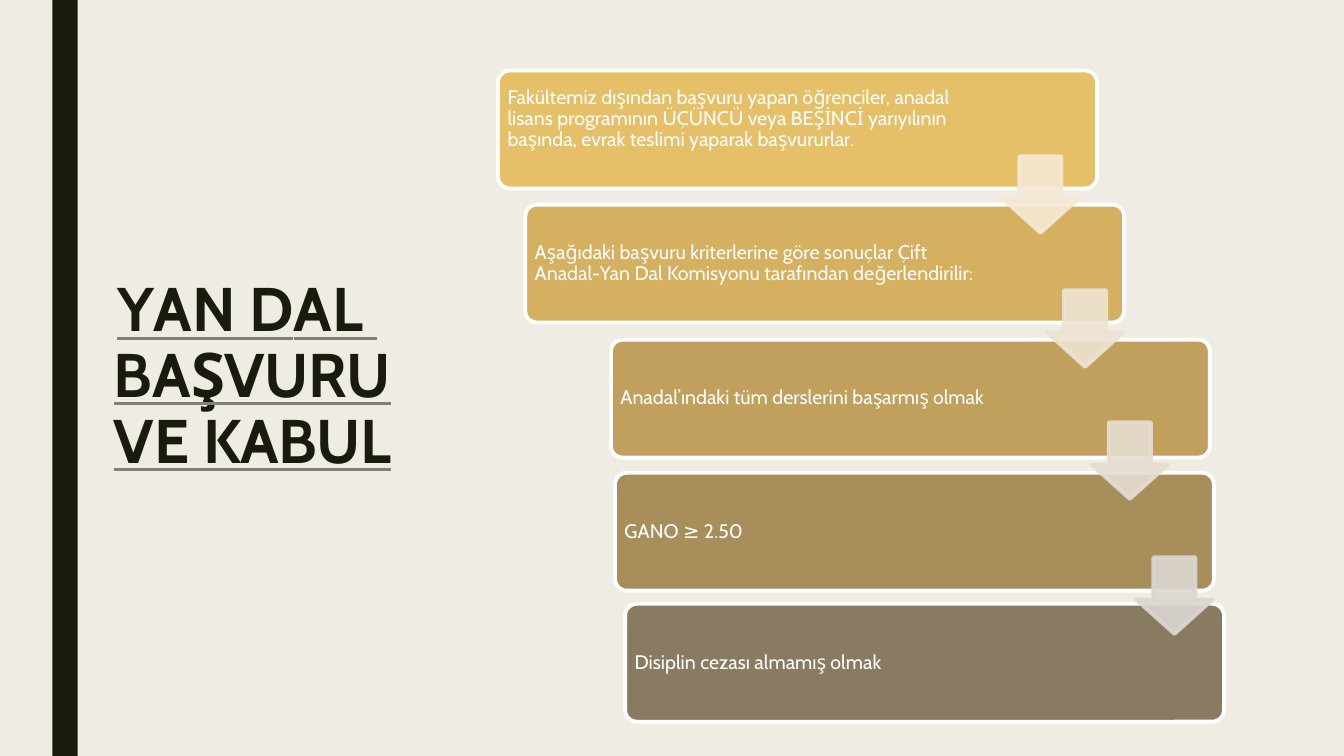
"""Build the slide on applying for a minor, with five stepped cards."""
import pptx
import pptx.util
import pptx.dml.color
import pptx.enum.shapes
import pptx.enum.text
import lxml.etree
from dataclasses import dataclass
from pptx.util import Inches

TITLE = [("Y", -4.3), ("A", -0.6), ("N ", -0.5), ("D", -1.6), ("A", -0.6),
         ("L", 0), (" ", 8), ("\v", 0), ("B", -1), ("A", -0.5), ("Ş", -1),
         ("VUR", -0.5), ("U", 0), (" ", -1.3), ("V", -0.5), ("E", 0),
         (" ", -1.4), ("KABU", -0.5), ("L", 0)]

# left, top, fill, right inset, bottom inset, text
CARDS = [
    (4.94, 0.7, "E6C069", 1.39, 0.27,
     "Fakültemiz dışından başvuru yapan öğrenciler, anadal lisans programının "
     "ÜÇÜNCÜ veya BEŞİNCİ yarıyılının başında, evrak teslimi yaparak başvururlar."),
    (5.21, 2.03, "D5B061", 1.27, 0.06,
     "Aşağıdaki başvuru kriterlerine göre sonuçlar Çift Anadal-Yan Dal "
     "Komisyonu tarafından değerlendirilir:"),
    (6.06, 3.37, "C0A05C", 1.27, 0.06,
     "Anadal’ındaki tüm derslerini başarmış olmak"),
    (6.1, 4.69, "A88E5B", 1.27, 0.06, "GANO ≥ 2.50"),
    (6.2, 5.99, "897B61", 1.27, 0.06, "Disiplin cezası almamış olmak"),
]
ARROWS = [(1.55, "F5E8D4"), (2.88, "EEE3D2"), (4.19, "E5DDD1"), (5.53, "DAD7D2")]
CARD_W, CARD_H = 5.94, 1.17
ARROW_X, ARROW_STEP, ARROW_SIZE = 9.94, 0.443, 0.76


@dataclass(frozen=True)
class Theme:
    """Hold colours and type sizes."""
    font: str = "Cabin"
    back: str = "EFEDE3"
    dark: str = "191B0E"
    rule: str = "7F7F7F"
    light: str = "FFFFFF"
    head: float = 44
    body: float = 14
    edge: float = 2.75


LOOK = Theme()
KINDS = pptx.enum.shapes.MSO_SHAPE
ALIGN = pptx.enum.text.PP_ALIGN
MIDDLE = pptx.enum.text.MSO_ANCHOR.MIDDLE
SPACE = "http://schemas.openxmlformats.org/drawingml/2006/main"


def rgb(code):
    """Turn a hex code into a colour."""
    return pptx.dml.color.RGBColor.from_string(code)


def child(node, name, **attrs):
    """Append a drawing element."""
    return lxml.etree.SubElement(node, f"{{{SPACE}}}{name}", **attrs)


def style(font, size, color):
    """Set the face, size and colour of a font."""
    font.name = LOOK.font
    font.size = pptx.util.Pt(size)
    font.color.rgb = rgb(color)


def draw(slide, kind, box, fill, line=None, adjust=()):
    """Add a flat preset shape."""
    shape = slide.shapes.add_shape(kind, *map(Inches, box))
    shape.shadow.inherit = False
    shape.fill.solid()
    shape.fill.fore_color.rgb = rgb(fill)
    if line:
        shape.line.color.rgb = rgb(line)
        shape.line.width = pptx.util.Pt(LOOK.edge)
    else:
        shape.line.fill.background()
    for i, value in enumerate(adjust):
        shape.adjustments[i] = value
    return shape


def add_title(slide):
    """Fill the title with spaced, underlined letters."""
    title = slide.shapes.title
    title.left, title.top, title.width, title.height = map(
        Inches, (0.7, 0.7, 3.61, 6.1))
    frame = title.text_frame
    frame.word_wrap = True
    frame.auto_size = pptx.enum.text.MSO_AUTO_SIZE.NONE
    frame.vertical_anchor = MIDDLE
    para = frame.paragraphs[0]
    para.alignment = ALIGN.CENTER
    para.line_spacing = 0.89
    para.space_after = pptx.util.Pt(12)
    style(para.font, LOOK.head, LOOK.dark)
    para.font.bold = True
    for text, gap in TITLE:
        if text == "\v":
            para.add_line_break()
            continue
        run = para.add_run()
        run.text = text
        style(run.font, LOOK.head, LOOK.dark)
        run.font.bold = run.font.underline = True
        props = run._r.get_or_add_rPr()
        props.set("spc", str(round(gap * 100)))
        rule = lxml.etree.Element(f"{{{SPACE}}}uFill")
        child(child(rule, "solidFill"), "srgbClr", val=LOOK.rule)
        props.find(f"{{{SPACE}}}solidFill").addnext(rule)


def add_card(slide, left, top, fill, right, bottom, text):
    """Add a rounded card with its text."""
    card = draw(slide, KINDS.ROUNDED_RECTANGLE, (left, top, CARD_W, CARD_H),
                fill, LOOK.light, (0.1,))
    frame = card.text_frame
    frame.word_wrap = True
    frame.vertical_anchor = MIDDLE
    frame.margin_left = frame.margin_top = Inches(0.06)
    frame.margin_right, frame.margin_bottom = Inches(right), Inches(bottom)
    frame.text = text
    para = frame.paragraphs[0]
    para.alignment = ALIGN.LEFT
    para.line_spacing = 0.9
    style(para.font, LOOK.body, LOOK.light)


def add_arrow(slide, left, top, color):
    """Add a see-through down arrow."""
    arrow = draw(slide, KINDS.DOWN_ARROW, (left, top, ARROW_SIZE, ARROW_SIZE),
                 color, color, (0.55, 0.45))
    for tint in arrow._element.spPr.iter(f"{{{SPACE}}}srgbClr"):
        child(tint, "alpha", val="90000")


def main():
    """Build and save the slide."""
    deck = pptx.Presentation()
    deck.slide_width, deck.slide_height = Inches(13.33), Inches(7.5)
    slide = deck.slides.add_slide(deck.slide_layouts[5])
    slide.background.fill.solid()
    slide.background.fill.fore_color.rgb = rgb(LOOK.back)
    draw(slide, KINDS.RECTANGLE, (0.52, 0, 0.25, 7.5), LOOK.dark)
    add_title(slide)
    for card in CARDS:
        add_card(slide, *card)
    for i, (top, color) in enumerate(ARROWS):
        add_arrow(slide, ARROW_X + i * ARROW_STEP, top, color)
    deck.save("out.pptx")


if __name__ == "__main__":
    main()
